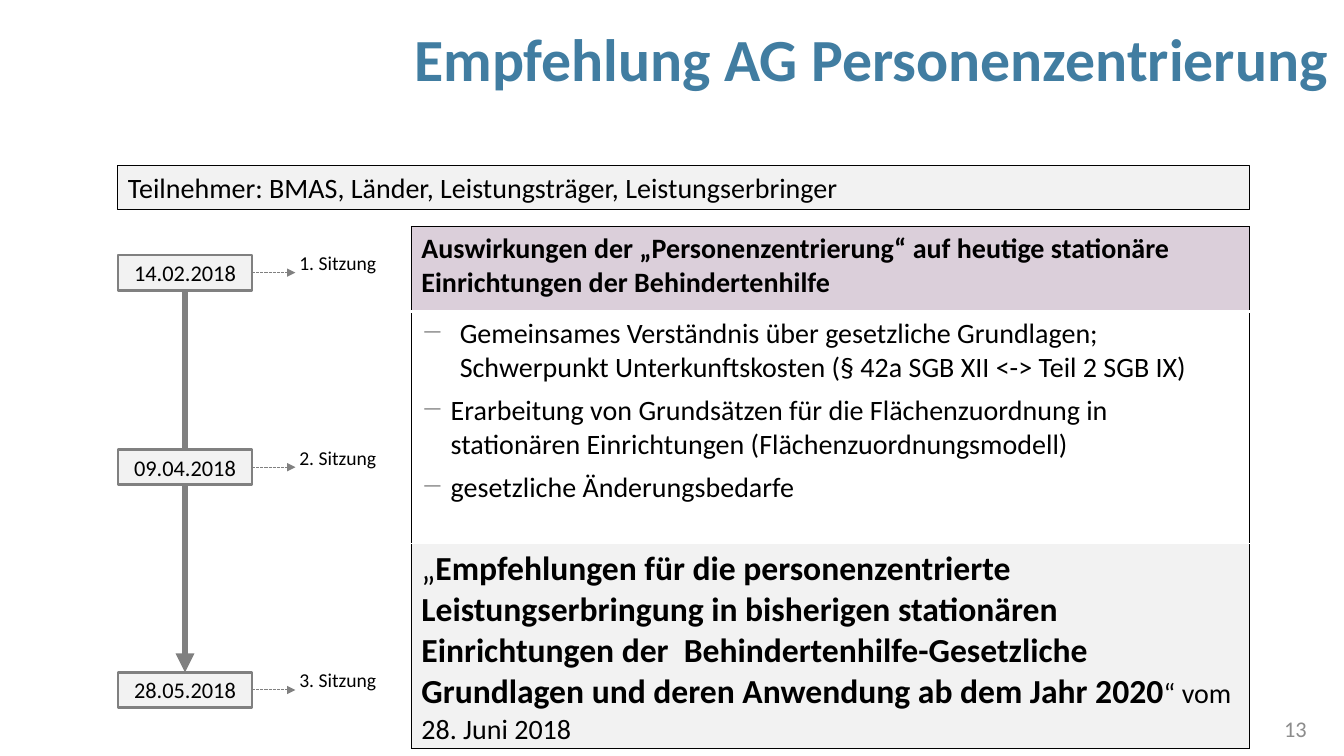
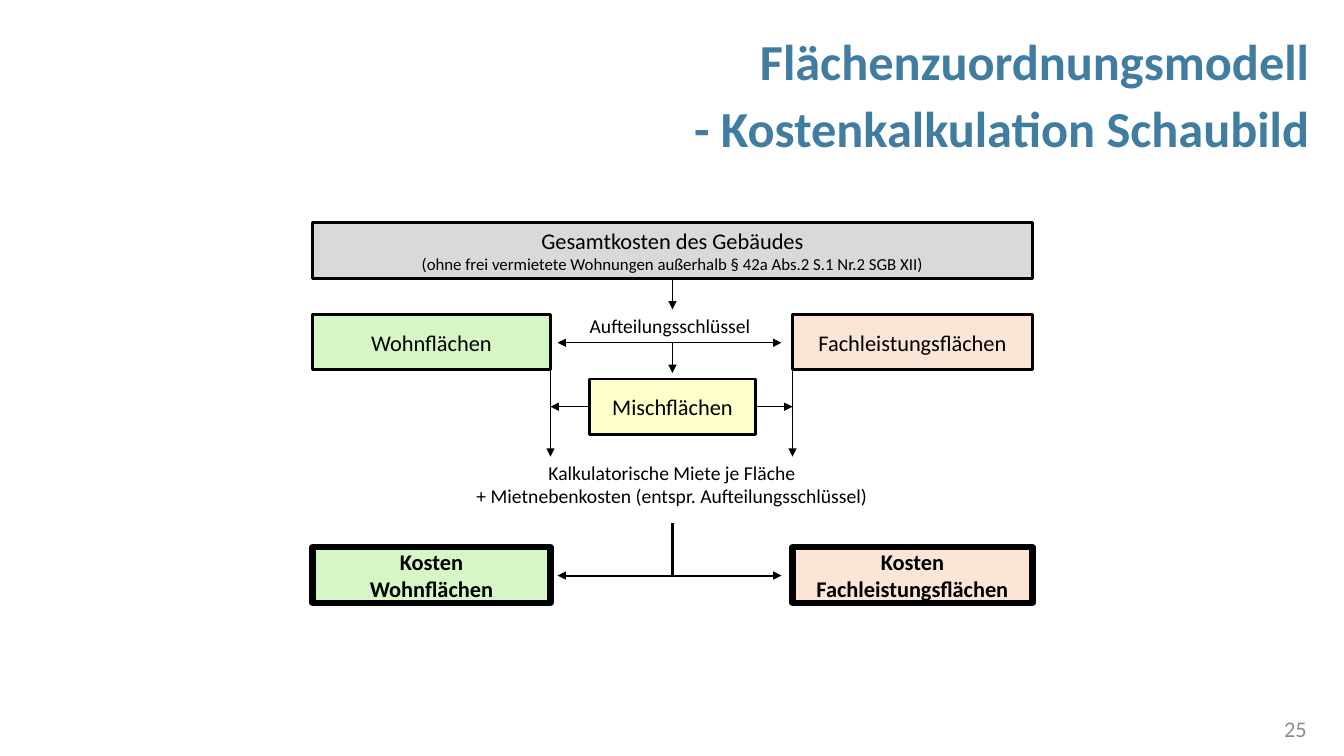
from dataclasses import dataclass

from lxml.etree import SubElement
from pptx import Presentation
from pptx.dml.color import RGBColor
from pptx.enum.dml import MSO_LINE
from pptx.enum.shapes import MSO_CONNECTOR, MSO_SHAPE
from pptx.enum.text import MSO_ANCHOR, PP_ALIGN
from pptx.oxml import parse_xml
from pptx.oxml.ns import nsdecls, qn
from pptx.util import Inches, Pt

FONT = "Calibri"
BLACK, WHITE, GRAY, LIGHT = "000000", "FFFFFF", "808080", "F2F2F2"
TITLE_BLUE, NUMBER_GRAY = "417DA1", "8C8C8C"
SILVER, MAUVE = "D9D9D9", "DBCFDA"
GREEN, PEACH, YELLOW = "D7F6C6", "FAE5D6", "FFFFCC"
TOP, LEFT, BOTTOM, RIGHT = range(4)  # connection sites of a rectangle


def grid(cells):
    """Length of a number of grid cells, ten to the inch."""
    return Inches(cells / 10)


def color(value):
    return RGBColor.from_string(value)


@dataclass
class Box:
    """Area on the slide, measured in grid cells."""
    left: float
    top: float
    width: float
    height: float

    def inner(self, left, top, width, height):
        return Box(self.left + left, self.top + top, width, height)

    def point(self, left, top):
        return self.left + left, self.top + top

    def place(self):
        return [grid(cells) for cells in (self.left, self.top, self.width, self.height)]


# Text
def add_run(paragraph, text, size, bold=False, ink=BLACK):
    run = paragraph.add_run()
    run.text = text
    run.font.name, run.font.size, run.font.bold = FONT, Pt(size), bold
    run.font.color.rgb = color(ink)


def write(frame, paragraphs, align=PP_ALIGN.LEFT):
    """Write paragraphs, each a list of (text, size, bold, ink) runs."""
    for number, runs in enumerate(paragraphs):
        paragraph = frame.add_paragraph() if number else frame.paragraphs[0]
        paragraph.alignment = align
        for run in runs:
            add_run(paragraph, *run)


def add_text(slide, box, paragraphs, align=PP_ALIGN.LEFT, wrap=True, anchor=MSO_ANCHOR.TOP):
    frame = slide.shapes.add_textbox(*box.place()).text_frame
    frame.word_wrap = wrap
    frame.vertical_anchor = anchor
    write(frame, paragraphs, align)
    return frame


def add_bullet(paragraph, indent):
    properties = paragraph._p.get_or_add_pPr()
    properties.set("marL", str(Inches(indent)))
    properties.set("indent", str(-Inches(indent)))
    bullet_color = SubElement(properties, qn("a:buClr"))
    SubElement(bullet_color, qn("a:srgbClr")).set("val", GRAY)
    SubElement(properties, qn("a:buChar")).set("char", "−")


# Shapes and lines
def add_rectangle(slide, box, paragraphs, fill, line=BLACK, weight=2, align=PP_ALIGN.CENTER):
    shape = slide.shapes.add_shape(MSO_SHAPE.RECTANGLE, *box.place())
    shape.shadow.inherit = False
    shape.fill.solid()
    shape.fill.fore_color.rgb = color(fill)
    shape.line.color.rgb = color(line)
    shape.line.width = Pt(weight)
    shape.text_frame.word_wrap = True
    shape.text_frame.vertical_anchor = MSO_ANCHOR.MIDDLE
    write(shape.text_frame, paragraphs, align)
    return shape


def add_line(slide, start, end, ink=BLACK, weight=0.75, ends=("tail",), dash=None,
             begin_at=None, end_at=None):
    """Draw a line; begin_at and end_at are (shape, site) joints."""
    connector = slide.shapes.add_connector(
        MSO_CONNECTOR.STRAIGHT, *[grid(cells) for cells in (*start, *end)])
    if begin_at:
        connector.begin_connect(*begin_at)
    if end_at:
        connector.end_connect(*end_at)
    connector.line.color.rgb = color(ink)
    connector.line.width = Pt(weight)
    if dash:
        connector.line.dash_style = dash
    for name in ends:
        SubElement(connector.line._get_or_add_ln(), qn(f"a:{name}End")).set("type", "triangle")
    SubElement(connector._element.spPr, qn("a:effectLst"))


# Frame shared by the slides
def add_slide(presentation, title_lines, title_box, size, number, spacing=None):
    slide = presentation.slides.add_slide(presentation.slide_layouts[6])
    frame = add_text(slide, title_box, [[]], PP_ALIGN.RIGHT)
    frame.margin_left = Inches(0.1)
    frame.margin_top = frame.margin_right = frame.margin_bottom = 0
    paragraph = frame.paragraphs[0]
    if spacing:
        paragraph.line_spacing = Pt(spacing)
    for position, text in enumerate(title_lines):
        if position:
            paragraph.add_line_break()
        add_run(paragraph, text, size, True, TITLE_BLUE)
    add_text(slide, Box(119, 70.3, 11.6, 3.9), [[(number, 16, False, NUMBER_GRAY)]],
             PP_ALIGN.RIGHT, anchor=MSO_ANCHOR.MIDDLE)
    return slide


# Timeline of meetings
def add_timeline(slide, box):
    meetings = [("14.02.2018", 0), ("09.04.2018", 19.3), ("28.05.2018", 41.4)]
    previous = None
    for number, (date, row) in enumerate(meetings, 1):
        date_box = box.inner(0, row, 13.3, 3.5)
        date_shape = add_rectangle(slide, date_box, [[(date, 16)]], LIGHT, GRAY)
        add_text(slide, date_box.inner(17, -0.9, 10.7, 5.2),
                 [[(f"{number}. Sitzung", 14)]], wrap=False)
        add_line(slide, date_box.point(13.3, 1.75), date_box.point(17.6, 1.75), GRAY,
                 dash=MSO_LINE.SQUARE_DOT, begin_at=(date_shape, RIGHT))
        if previous:
            add_line(slide, box.point(6.65, 0), date_box.point(6.65, 0), GRAY, 4.5,
                     ends=("tail",) if number == len(meetings) else (),
                     begin_at=(previous, BOTTOM), end_at=(date_shape, TOP))
        previous = date_shape


# Table of results
def style_cell(cell, fill, top, bottom):
    cell.fill.solid()
    cell.fill.fore_color.rgb = color(fill)
    borders = [("L", BLACK, 1), ("R", BLACK, 1), ("T", *top), ("B", *bottom)]
    properties = cell._tc.get_or_add_tcPr()
    for position, (side, ink, weight) in enumerate(borders):
        properties.insert(position, parse_xml(
            f'<a:ln{side} {nsdecls("a")} w="{Pt(weight)}"><a:solidFill>'
            f'<a:srgbClr val="{ink}"/></a:solidFill></a:ln{side}>'))


def add_results(slide, box):
    heading = [[("Auswirkungen der „Personenzentrierung“ auf heutige stationäre "
                 "Einrichtungen der Behindertenhilfe", 20, True)]]
    topics = [
        [("Gemeinsames Verständnis über gesetzliche Grundlagen; Schwerpunkt "
          "Unterkunftskosten (§ 42a SGB XII <-> Teil 2 SGB IX)", 20)],
        [("Erarbeitung von Grundsätzen für die Flächenzuordnung in stationären "
          "Einrichtungen (Flächenzuordnungsmodell)", 20)],
        [("gesetzliche Änderungsbedarfe", 20)],
    ]
    outcome = [[
        ("„", 24),
        ("Empfehlungen für die personenzentrierte Leistungserbringung in bisherigen "
         "stationären Einrichtungen der  Behindertenhilfe-Gesetzliche Grundlagen und "
         "deren Anwendung ab dem Jahr 2020", 24, True),
        ("“ vom 28. Juni 2018", 20),
    ]]
    rows = [
        (8.4, heading, MAUVE, (BLACK, 1), (WHITE, 3)),
        (23, topics, WHITE, (WHITE, 3), (WHITE, 1)),
        (20.4, outcome, LIGHT, (WHITE, 1), (BLACK, 1)),
    ]
    table = slide.shapes.add_table(len(rows), 1, *box.place()).table
    table.first_row = table.horz_banding = False
    for number, (height, paragraphs, fill, top, bottom) in enumerate(rows):
        table.rows[number].height = grid(height)
        cell = table.cell(number, 0)
        write(cell.text_frame, paragraphs)
        style_cell(cell, fill, top, bottom)
    for number, paragraph in enumerate(table.cell(1, 0).text_frame.paragraphs):
        if number:
            paragraph.space_before = Pt(6)
        add_bullet(paragraph, 0.29 if number else 0.38)


# Cost diagram
def add_cost_diagram(slide, box):
    height, middle = 5.5, box.width / 2
    areas_row, mixed_row, costs_row = 9.1, 15.5, 32.2
    left_edge, right_edge = 23.6, 47.6
    arrow_left, arrow_right = 24.3, 46.5

    total = add_rectangle(slide, box.inner(0, 0, box.width, height), [
        [("Gesamtkosten des Gebäudes", 16)],
        [("(ohne frei vermietete Wohnungen außerhalb § 42a Abs.2 S.1 Nr.2 SGB XII)", 12)],
    ], SILVER)
    mixed = add_rectangle(slide, box.inner(middle - 8.2, mixed_row, 16.4, height),
                          [[("Mischflächen", 16)]], YELLOW)

    # Living space on the left, service space on the right
    columns = [
        (0, left_edge, left_edge, GREEN, "Wohnflächen", ["Kosten", "Wohnflächen"], LEFT),
        (right_edge, box.width - right_edge, right_edge, PEACH, "Fachleistungsflächen",
         ["Kosten Fachleistungsflächen"], RIGHT),
    ]
    for left, width, edge, fill, area, costs, site in columns:
        add_rectangle(slide, box.inner(left, areas_row, width, height), [[(area, 16)]], fill)
        add_rectangle(slide, box.inner(left, costs_row, width, height),
                      [[(line, 16, True)] for line in costs], fill, weight=4.5)
        add_line(slide, box.point(edge, areas_row + height), box.point(edge, 23.2))
        add_line(slide, box.point(middle, 18.25), box.point(edge, 18.25),
                 begin_at=(mixed, site))

    # Allocation key and rent
    add_text(slide, box.inner(26.5, 8.6, 18.3, 3.4), [[("Aufteilungsschlüssel", 14)]])
    add_text(slide, box.inner(14, 23.1, 43.3, 5.7), [
        [("Kalkulatorische Miete je Fläche", 14)],
        [("+ Mietnebenkosten (entspr. Aufteilungsschlüssel)", 14)],
    ], PP_ALIGN.CENTER)

    # Arrows along the middle axis
    add_line(slide, box.point(middle, height), box.point(middle, 8.6),
             begin_at=(total, BOTTOM))
    add_line(slide, box.point(middle, 11.9), box.point(middle, 14.9))
    add_line(slide, box.point(middle, 29.8), box.point(middle, 35), weight=1.5, ends=())
    for row, weight in [(11.9, 0.75), (35, 1.5)]:
        add_line(slide, box.point(arrow_left, row), box.point(arrow_right, row),
                 weight=weight, ends=("head", "tail"))


def build_recommendation(presentation):
    slide = add_slide(presentation, ["Empfehlung AG Personenzentrierung"],
                      Box(35.8, 2.2, 96, 10), 42.7, "13")
    add_rectangle(slide, Box(11.7, 16.4, 112.2, 4.4),
                  [[("Teilnehmer: BMAS, Länder, Leistungsträger, Leistungserbringer", 20)]],
                  LIGHT, weight=0.75, align=PP_ALIGN.LEFT)
    add_results(slide, Box(40.8, 22.5, 83.1, 51.8))
    add_timeline(slide, Box(11.7, 25.3, 27.7, 44.9))


def build_cost_model(presentation):
    slide = add_slide(presentation, ["Flächenzuordnungsmodell", "- Kostenkalkulation Schaubild"],
                      Box(42.3, 2.3, 87.6, 11), 36, "25", spacing=48)
    add_cost_diagram(slide, Box(31, 22.1, 71.4, 37.7))


def main():
    presentation = Presentation()
    presentation.slide_width, presentation.slide_height = Inches(13.33), Inches(7.5)
    build_recommendation(presentation)
    build_cost_model(presentation)
    presentation.save("out.pptx")


if __name__ == "__main__":
    main()
